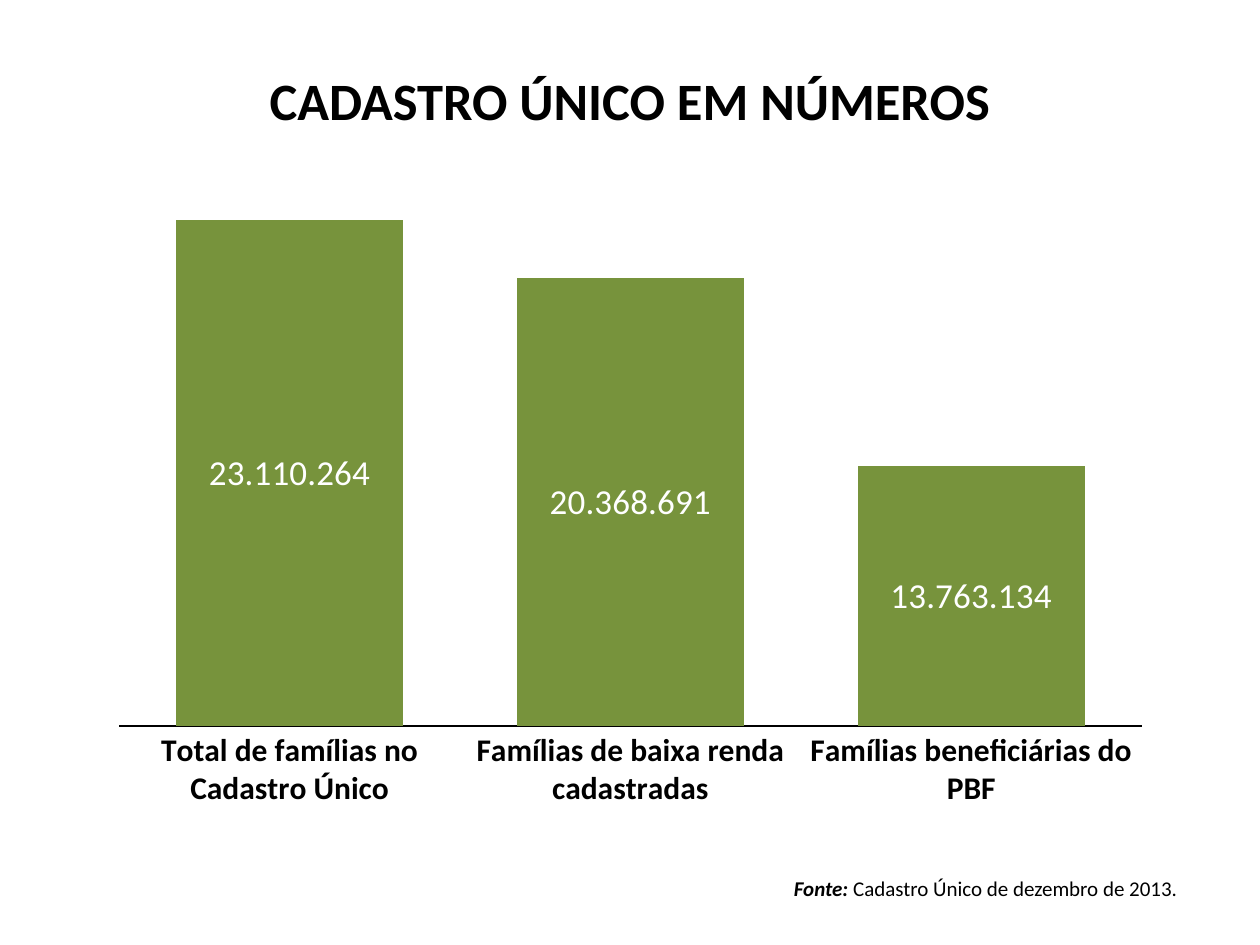
from typing import NamedTuple

from lxml import etree
from pptx import Presentation
from pptx.chart.data import CategoryChartData
from pptx.dml.color import RGBColor
from pptx.enum.chart import XL_CHART_TYPE, XL_LABEL_POSITION, XL_TICK_LABEL_POSITION, XL_TICK_MARK
from pptx.enum.text import MSO_ANCHOR, PP_ALIGN
from pptx.oxml.ns import qn
from pptx.util import Emu, Pt

COLUMN = XL_CHART_TYPE.COLUMN_CLUSTERED
LABEL_CENTER = XL_LABEL_POSITION.CENTER
NO_LABELS = XL_TICK_LABEL_POSITION.NONE
NO_TICK = XL_TICK_MARK.NONE
CENTER, RIGHT = PP_ALIGN.CENTER, PP_ALIGN.RIGHT
MIDDLE = MSO_ANCHOR.MIDDLE

BLACK = RGBColor(0x00, 0x00, 0x00)
WHITE = RGBColor(0xFF, 0xFF, 0xFF)
GREEN = RGBColor(0x77, 0x93, 0x3C)
FONT = "Calibri"
PX_PER_INCH = 126


class Bar(NamedTuple):
    category: str
    value: int
    label: str


BARS = [
    Bar("Total de famílias no Cadastro Único", 27194641, "23.110.264"),
    Bar("Famílias de baixa renda cadastradas", 24084714, "20.368.691"),
    Bar("Famílias beneficiárias do PBF", 13960727, "13.763.134"),
]


def px(n: int) -> Emu:
    return Emu(round(n * 914400 / PX_PER_INCH))


def style_font(font, size: int, color: RGBColor = BLACK, bold: bool = False) -> None:
    font.name, font.size, font.bold = FONT, Pt(size), bold
    font.color.rgb = color


def set_plot_layout(chart, x: float, y: float, w: float, h: float) -> None:
    """Fix the inner plot area, in fractions of the chart's size."""
    area = chart.plots[0]._element.getparent()
    for old in area.findall(qn("c:layout")):
        area.remove(old)
    layout = etree.Element(qn("c:layout"))
    manual = etree.SubElement(layout, qn("c:manualLayout"))
    settings = {"layoutTarget": "inner", "xMode": "edge", "yMode": "edge",
                "x": x, "y": y, "w": w, "h": h}
    for name, value in settings.items():
        etree.SubElement(manual, qn(f"c:{name}")).set("val", str(value))
    area.insert(0, layout)


def add_title(s) -> None:
    title = s.shapes.title
    title.left, title.top, title.width, title.height = px(63), px(55), px(1134), px(90)
    tf = title.text_frame
    tf.text = "CADASTRO ÚNICO EM NÚMEROS"
    tf.vertical_anchor = MIDDLE
    p = tf.paragraphs[0]
    p.alignment = CENTER
    style_font(p.font, 30, bold=True)


def add_family_chart(s, bars: list[Bar]) -> None:
    data = CategoryChartData(number_format="#,##0")
    data.categories = [bar.category for bar in bars]
    data.add_series("Famílias", [bar.value for bar in bars])
    chart = s.shapes.add_chart(COLUMN, px(98), px(155), px(1065), px(664), data).chart
    chart.has_legend = chart.has_title = False
    style_font(chart.font, 10)
    set_plot_layout(chart, 0.02, 0.02, 0.96, 0.84)

    cat_axis, val_axis = chart.category_axis, chart.value_axis
    for axis in (cat_axis, val_axis):
        axis.major_tick_mark = axis.minor_tick_mark = NO_TICK
        axis.has_major_gridlines = False
    style_font(cat_axis.tick_labels.font, 18, bold=True)
    cat_axis.format.line.color.rgb = BLACK
    cat_axis.format.line.width = Pt(0.75)
    val_axis.minimum_scale, val_axis.maximum_scale = 0, 30_000_000
    val_axis.major_unit = 10_000_000
    val_axis.tick_label_position = NO_LABELS
    val_axis.format.line.fill.background()

    plot = chart.plots[0]
    plot.gap_width = 50
    plot.vary_by_categories = False
    series = plot.series[0]
    series.format.fill.solid()
    series.format.fill.fore_color.rgb = GREEN
    labels = series.data_labels
    labels.show_value = True
    labels.position = LABEL_CENTER
    style_font(labels.font, 20, WHITE)
    for i, bar in enumerate(bars):
        label = series.points[i].data_label
        r = label.text_frame.paragraphs[0].add_run()
        r.text = bar.label
        style_font(r.font, 20, WHITE)
        label.position = LABEL_CENTER


def add_source(s) -> None:
    tf = s.shapes.add_textbox(px(769), px(869), px(421), px(49)).text_frame
    tf.word_wrap = True
    p = tf.paragraphs[0]
    p.alignment = RIGHT
    style_font(p.font, 12)
    r = p.add_run()
    r.text = "Fonte:"
    r.font.bold = r.font.italic = True
    p.add_run().text = " Cadastro Único de dezembro de 2013."


def main() -> None:
    prs = Presentation()
    prs.slide_width, prs.slide_height = px(1260), px(945)
    s = prs.slides.add_slide(prs.slide_layouts[5])
    add_title(s)
    add_family_chart(s, BARS)
    add_source(s)
    prs.save("out.pptx")


if __name__ == "__main__":
    main()
